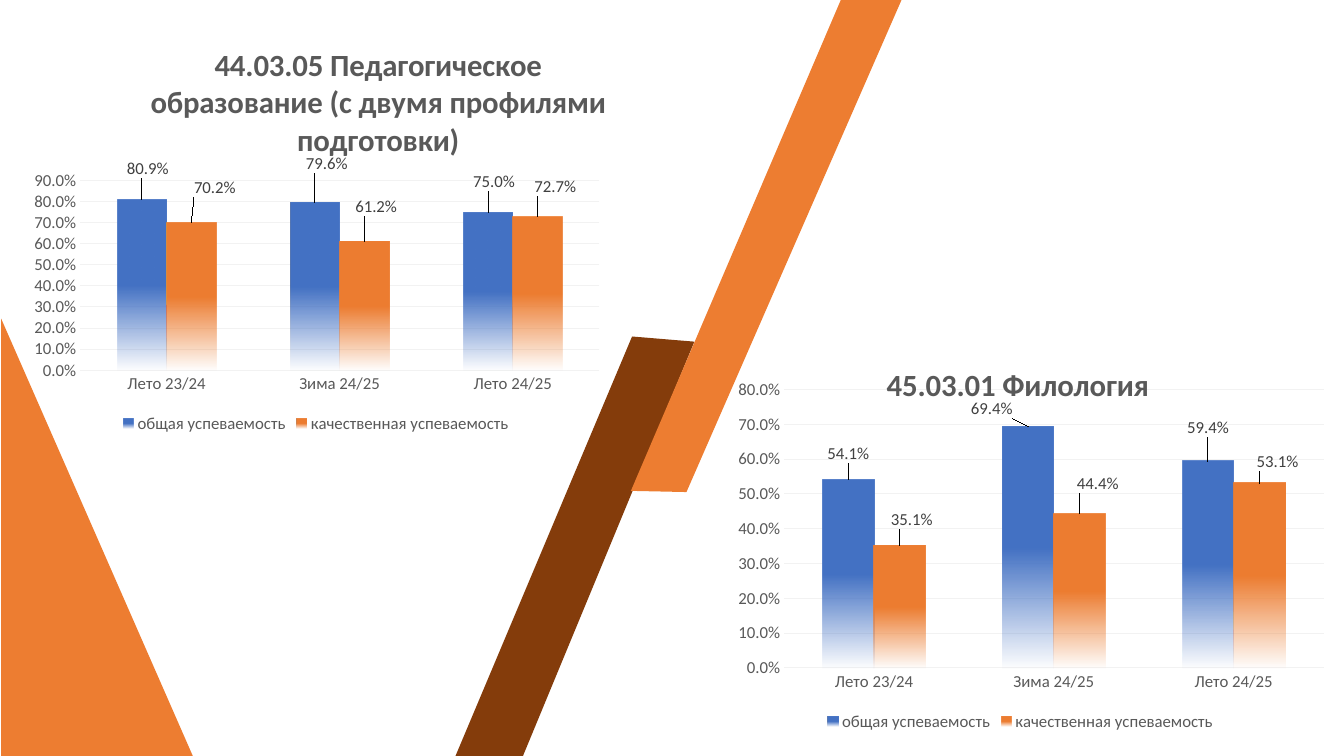
from dataclasses import dataclass

from lxml import etree
from pptx import Presentation
from pptx.chart.data import CategoryChartData
from pptx.dml.color import RGBColor
from pptx.enum.chart import XL_CHART_TYPE, XL_LABEL_POSITION, XL_LEGEND_POSITION, XL_TICK_MARK
from pptx.enum.shapes import MSO_SHAPE
from pptx.oxml.ns import qn
from pptx.util import Cm, Pt


@dataclass(frozen=True)
class Theme:
    font: str = "Calibri"
    blue: str = "4472C4"
    orange: str = "ED7D31"
    brown: str = "843C0B"
    text: str = "595959"
    label: str = "404040"
    grid: str = "F2F2F2"
    title_size: int = 22
    body_size: int = 12


THEME = Theme()
TERMS = ["Лето 23/24", "Зима 24/25", "Лето 24/25"]
SERIES = [("общая успеваемость", THEME.blue), ("качественная успеваемость", THEME.orange)]


def format_font(font, size=THEME.body_size, color=THEME.text, bold=False):
    font.name = THEME.font
    font.size = Pt(size)
    font.bold = bold
    font.color.rgb = RGBColor.from_string(color)


def add_text(tf, text, **kwargs):
    r = tf.paragraphs[0].add_run()
    r.text = text
    format_font(r.font, **kwargs)


def place(parent, index, **values):
    for old in parent.findall(qn("c:layout")):
        parent.remove(old)
    layout = etree.Element(qn("c:layout"))
    manual = etree.SubElement(layout, qn("c:manualLayout"))
    for name, value in values.items():
        etree.SubElement(manual, qn(f"c:{name}")).set("val", str(value))
    parent.insert(index, layout)


def paint(shape, color):
    shape.shadow.inherit = False
    shape.fill.solid()
    shape.fill.fore_color.rgb = RGBColor.from_string(color)
    shape.line.fill.background()


def fade(fill, color):
    fill.gradient()
    fill.gradient_angle = 270
    for stop, position in zip(fill.gradient_stops, (0.5, 1)):
        stop.position = position
        stop.color.rgb = RGBColor.from_string(color)
    clear = fill.gradient_stops[1]._gs.find(qn("a:srgbClr"))
    etree.SubElement(clear, qn("a:alpha")).set("val", "0")


def add_band(s, points, color):
    corners = [(Cm(x), Cm(y)) for x, y in points]
    builder = s.shapes.build_freeform(*corners[0])
    builder.add_line_segments(corners[1:], close=True)
    paint(builder.convert_to_shape(), color)


def add_decor(s, width, height):
    sp = s.shapes.add_shape(MSO_SHAPE.ISOSCELES_TRIANGLE, Cm(0.03), Cm(8.03), Cm(4.83), Cm(height - 8.03))
    sp.adjustments[0] = 0
    paint(sp, THEME.orange)
    add_band(s, [(15.93, 8.48), (17.5, 8.61), (13.18, height), (11.48, height)], THEME.brown)
    add_band(s, [(21.19, 0), (22.72, 0), (17.3, 12.4), (15.9, 12.37)], THEME.orange)


def add_labels(series, offsets):
    labels = series.data_labels
    labels.show_value = True
    labels.number_format = "0.0%"
    labels.number_format_is_linked = False
    labels.position = XL_LABEL_POSITION.OUTSIDE_END
    format_font(labels.font, color=THEME.label)
    for i in range(len(offsets)):
        label = series.points[i].data_label
        label.position = XL_LABEL_POSITION.OUTSIDE_END
        format_font(label.font, color=THEME.label)
    for label, (x, y) in zip(series._element.iter(qn("c:dLbl")), offsets):
        place(label, 1, x=x, y=y)


def add_axes(chart, top):
    for axis in (chart.category_axis, chart.value_axis):
        axis.major_tick_mark = axis.minor_tick_mark = XL_TICK_MARK.NONE
        axis.format.line.fill.background()
        format_font(axis.tick_labels.font)
    axis = chart.value_axis
    axis.minimum_scale, axis.maximum_scale, axis.major_unit = 0, top, 0.1
    axis.tick_labels.number_format = "0.0%"
    axis.tick_labels.number_format_is_linked = False
    axis.major_gridlines.format.line.width = Pt(0.75)
    axis.major_gridlines.format.line.color.rgb = RGBColor.from_string(THEME.grid)


def add_results(s, box, title, values, offsets, top, title_at, plot_at):
    data = CategoryChartData(number_format="0.0%")
    data.categories = TERMS
    for (name, _), row in zip(SERIES, values):
        data.add_series(name, row)
    chart = s.shapes.add_chart(XL_CHART_TYPE.COLUMN_CLUSTERED, *map(Cm, box), data).chart
    format_font(chart.font)

    chart.has_title = True
    add_text(chart.chart_title.text_frame, title, size=THEME.title_size, bold=True)
    title_x, title_y = title_at
    place(chart.chart_title._element, 1, xMode="edge", yMode="edge", x=title_x, y=title_y)

    plot = chart.plots[0]
    plot.gap_width, plot.overlap, plot.vary_by_categories = 150, 0, False
    for series, (_, color), shifts in zip(plot.series, SERIES, offsets):
        fade(series.format.fill, color)
        add_labels(series, shifts)
    x, y, w, h = plot_at
    place(chart._chartSpace.chart.plotArea, 0, layoutTarget="inner",
          xMode="edge", yMode="edge", x=x, y=y, w=w, h=h)

    add_axes(chart, top)
    chart.has_legend = True
    chart.legend.position = XL_LEGEND_POSITION.BOTTOM
    chart.legend.include_in_layout = False
    format_font(chart.legend.font)


def main():
    width, height = 33.87, 19.05
    prs = Presentation()
    prs.slide_width, prs.slide_height = Cm(width), Cm(height)
    s = prs.slides.add_slide(prs.slide_layouts[6])
    add_decor(s, width, height)
    add_results(
        s, (0.53, 0.41, 14.88, 10.62),
        "44.03.05 Педагогическое образование (с двумя профилями подготовки)",
        [(0.809, 0.796, 0.75), (0.702, 0.612, 0.727)],
        [[(0.01, -0.04), (0.02, -0.06), (0.01, -0.04)],
         [(0.04, -0.05), (0.02, -0.05), (0.03, -0.04)]],
        0.9, (0.21, 0.05), (0.1, 0.39, 0.88, 0.45))
    add_results(
        s, (18.08, 8.51, 15.29, 10.03),
        "45.03.01 Филология",
        [(0.541, 0.694, 0.594), (0.351, 0.444, 0.531)],
        [[(0, -0.03), (-0.06, -0.01), (0, -0.05)],
         [(0.02, -0.03), (0.03, -0.04), (0.03, -0.02)]],
        0.8, (0.27, 0.05), (0.11, 0.13, 0.89, 0.7))
    prs.save("out.pptx")


if __name__ == "__main__":
    main()
